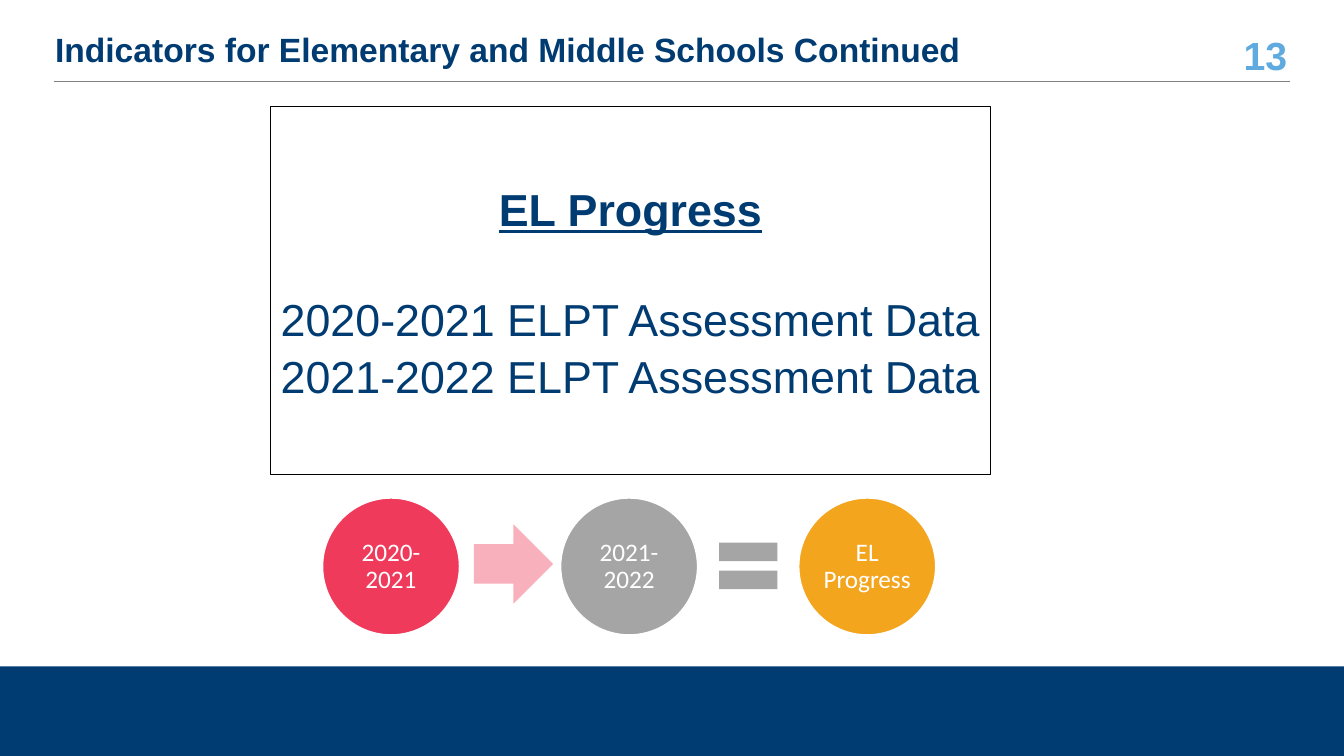
from typing import NamedTuple, Optional
from lxml.etree import SubElement
from pptx import Presentation
from pptx.dml.color import RGBColor
from pptx.enum.shapes import MSO_CONNECTOR as Link, MSO_SHAPE as Kind
from pptx.enum.text import MSO_ANCHOR as Anchor, PP_ALIGN as Align
from pptx.oxml.ns import qn
from pptx.util import Cm, Pt

NAVY, WHITE, GRAY = "003B71", "FFFFFF", "A5A5A5"


class Box(NamedTuple):
    left: float
    top: float
    width: float
    height: float


class Item(NamedTuple):
    kind: Kind
    box: Box
    fill: Optional[str] = None
    line: Optional[str] = None
    weight: float = 1


class Line(NamedTuple):
    text: str
    font: dict
    color: str = NAVY
    para: dict = {}


class Step(NamedTuple):
    text: str
    color: str


def paint(part, color: str) -> None:
    part.rgb = RGBColor.from_string(color)


def apply(part, values: dict) -> None:
    for name, value in values.items():
        setattr(part, name, value)


def write(frame, lines: list[Line], wrap: bool = True, inset: float = 0.25) -> None:
    apply(frame, dict(word_wrap=wrap, vertical_anchor=Anchor.MIDDLE,
                      margin_left=Cm(inset), margin_right=Cm(inset),
                      margin_top=Cm(inset / 2), margin_bottom=Cm(inset / 2)))
    for i, line in enumerate(lines):
        para = frame.add_paragraph() if i else frame.paragraphs[0]
        apply(para, line.para)
        run = para.add_run()
        run.text = line.text
        apply(run.font, line.font)
        paint(run.font.color, line.color)


def draw(slide, item: Item):
    shape = slide.shapes.add_shape(item.kind, *map(Cm, item.box))
    shape.shadow.inherit = False
    if item.fill:
        shape.fill.solid()
        paint(shape.fill.fore_color, item.fill)
    else:
        shape.fill.background()
    if item.line:
        paint(shape.line.color, item.line)
        shape.line.width = Pt(item.weight)
    else:
        shape.line.fill.background()
    return shape


def label(slide, box: Box, line: Line) -> None:
    write(slide.shapes.add_textbox(*map(Cm, box)).text_frame, [line])


def rule(slide, left: float, right: float, top: float) -> None:
    line = slide.shapes.add_connector(Link.STRAIGHT, Cm(left), Cm(top), Cm(right), Cm(top))
    paint(line.line.color, "808080")
    line.line.width = Pt(0.5)
    SubElement(line._element.spPr, qn("a:effectLst"))


def main() -> None:
    deck = Presentation()
    deck.slide_width, deck.slide_height = Cm(33.87), Cm(19.05)
    slide = deck.slides.add_slide(deck.slide_layouts[6])

    # Footer band, page number, title and rule
    draw(slide, Item(Kind.RECTANGLE, Box(0, 16.79, 33.87, 2.26), NAVY))
    bold = dict(name="Arial", bold=True)
    label(slide, Box(30.66, 0.84, 2.03, 1.07),
          Line("13", bold | dict(size=Pt(28)), "5FAADE", dict(alignment=Align.RIGHT)))
    label(slide, Box(1.14, 0.76, 29.46, 1.07),
          Line("Indicators for Elementary and Middle Schools Continued",
               bold | dict(size=Pt(24)), NAVY, dict(line_spacing=0.9)))
    rule(slide, 1.37, 32.51, 2.04)

    # Progress steps
    size, pitch, left, top = 3.45, 6, 8.13, 12.55
    steps = [Step("2020-2021", "EF3A5B"), Step("2021-2022", GRAY),
             Step("EL Progress", "F3A51E")]
    for i, step in enumerate(steps):
        disc = draw(slide, Item(Kind.OVAL, Box(left + i * pitch, top, size, size),
                                step.color, WHITE))
        write(disc.text_frame,
              [Line(step.text, dict(name="Calibri", size=Pt(18)), WHITE,
                    dict(alignment=Align.CENTER, line_spacing=0.9))], inset=0.08)

    # Signs between the steps
    draw(slide, Item(Kind.RIGHT_ARROW, Box(11.94, 13.21, 2, 2), "F9B0BD"))
    draw(slide, Item(Kind.MATH_EQUAL, Box(17.86, 13.26, 2, 2), GRAY))

    # Data panel
    panel = draw(slide, Item(Kind.RECTANGLE, Box(6.81, 2.69, 18.16, 9.27),
                             line="000000", weight=0.75))
    plain = dict(name="Arial", size=Pt(32))
    mid = dict(alignment=Align.CENTER, line_spacing=1.05)
    write(panel.text_frame, [
        Line("EL Progress", plain | dict(bold=True, underline=True), para=mid),
        Line("2020-2021 ELPT Assessment Data", plain, para=mid | dict(space_before=Pt(38.6))),
        Line("2021-2022 ELPT Assessment Data", plain, para=mid),
    ], wrap=False)

    deck.save("out.pptx")


if __name__ == "__main__":
    main()
